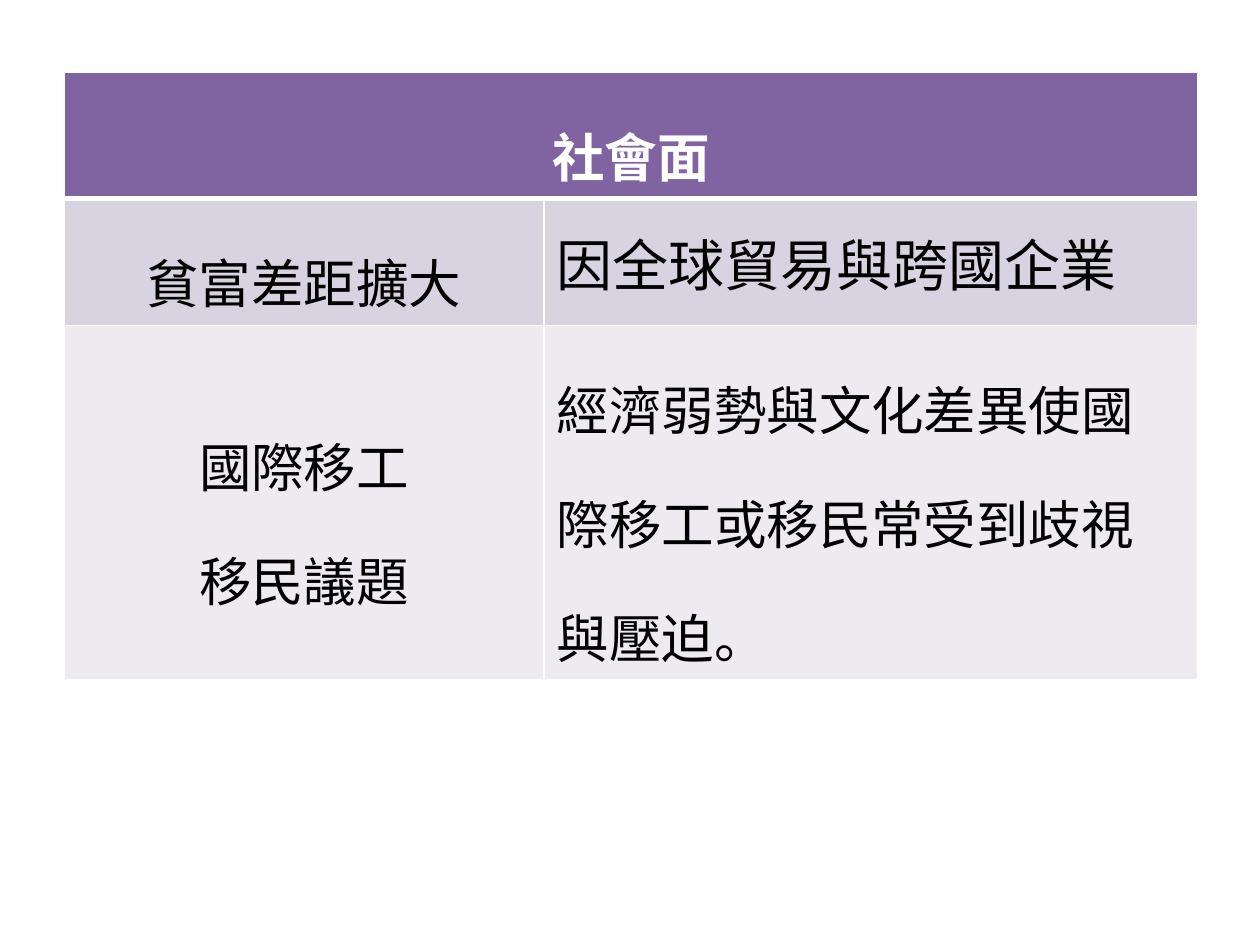
from lxml import etree
from pptx import Presentation
from pptx.dml.color import RGBColor
from pptx.enum import text
from pptx.oxml.ns import qn
from pptx.util import Emu, Pt

PX = 914400 / 126
FONT = "Noto Sans CJK SC"
COLORS = {
    "header": "8064A2",
    "band_dark": "D8D3E0",
    "band_light": "EDEAF0",
    "white": "FFFFFF",
    "black": "000000",
}


def px(length):
    return Emu(round(length * PX))


def rgb(name):
    return RGBColor.from_string(COLORS[name])


def write(cell, content, size=30, color="black", bold=False, align="LEFT",
          spacing=1.5, anchor="MIDDLE"):
    """Fill a cell with one paragraph per line of content."""
    cell.vertical_anchor = getattr(text.MSO_ANCHOR, anchor)
    frame = cell.text_frame
    for number, line in enumerate(content.split("\n")):
        para = frame.add_paragraph() if number else frame.paragraphs[0]
        para.alignment = getattr(text.PP_ALIGN, align)
        para.line_spacing = spacing
        span = para.add_run()
        span.text = line
        font = span.font
        font.name, font.size, font.bold = FONT, Pt(size), bold
        font.color.rgb = rgb(color)
        latin = font._element.find(qn("a:latin"))
        latin.addnext(etree.Element(qn("a:ea"), typeface=FONT))


def paint(cell, fill, top=1, bottom=1):
    """Set the fill and the white borders, widths in points."""
    cell.fill.solid()
    cell.fill.fore_color.rgb = rgb(fill)
    properties = cell._tc.get_or_add_tcPr()
    widths = {"lnL": 1, "lnR": 1, "lnT": top, "lnB": bottom}
    for place, (side, width) in enumerate(widths.items()):
        line = etree.Element(qn(f"a:{side}"), w=str(Pt(width)))
        solid = etree.SubElement(line, qn("a:solidFill"))
        etree.SubElement(solid, qn("a:srgbClr"), val=COLORS["white"])
        properties.insert(place, line)


def social_table(page, left, top, width, height):
    frame = page.shapes.add_table(3, 2, px(left), px(top), px(width), px(height))
    table = frame.table
    table.first_row = table.horz_banding = False

    # Columns, and rows that grow with their text
    topic_width = 480
    table.columns[0].width = px(topic_width)
    table.columns[1].width = px(width - topic_width)
    for row in table.rows:
        row.height = px(52)
    frame.height = px(height)

    # Fills and borders, with a thick line under the header
    for number, fill in enumerate(("header", "band_dark", "band_light")):
        for cell in table.rows[number].cells:
            paint(cell, fill, top=3 if number == 1 else 1,
                  bottom=3 if number == 0 else 1)

    # Header
    table.cell(0, 0).merge(table.cell(0, 1))
    write(table.cell(0, 0), "社會面", color="white", bold=True,
          align="CENTER", anchor="TOP")

    # Topics and their explanations
    write(table.cell(1, 0), "貧富差距擴大", align="CENTER")
    write(table.cell(1, 1), "因全球貿易與跨國企業", size=32, spacing=1.0)
    write(table.cell(2, 0), "國際移工\n移民議題", align="CENTER")
    write(table.cell(2, 1), "經濟弱勢與文化差異使國際移工或移民常受到歧視與壓迫。",
          anchor="TOP")


def main():
    deck = Presentation()
    deck.slide_width, deck.slide_height = px(1260), px(945)
    page = deck.slides.add_slide(deck.slide_layouts[6])
    social_table(page, 64, 72, 1134, 510)
    deck.save("out.pptx")


if __name__ == "__main__":
    main()
